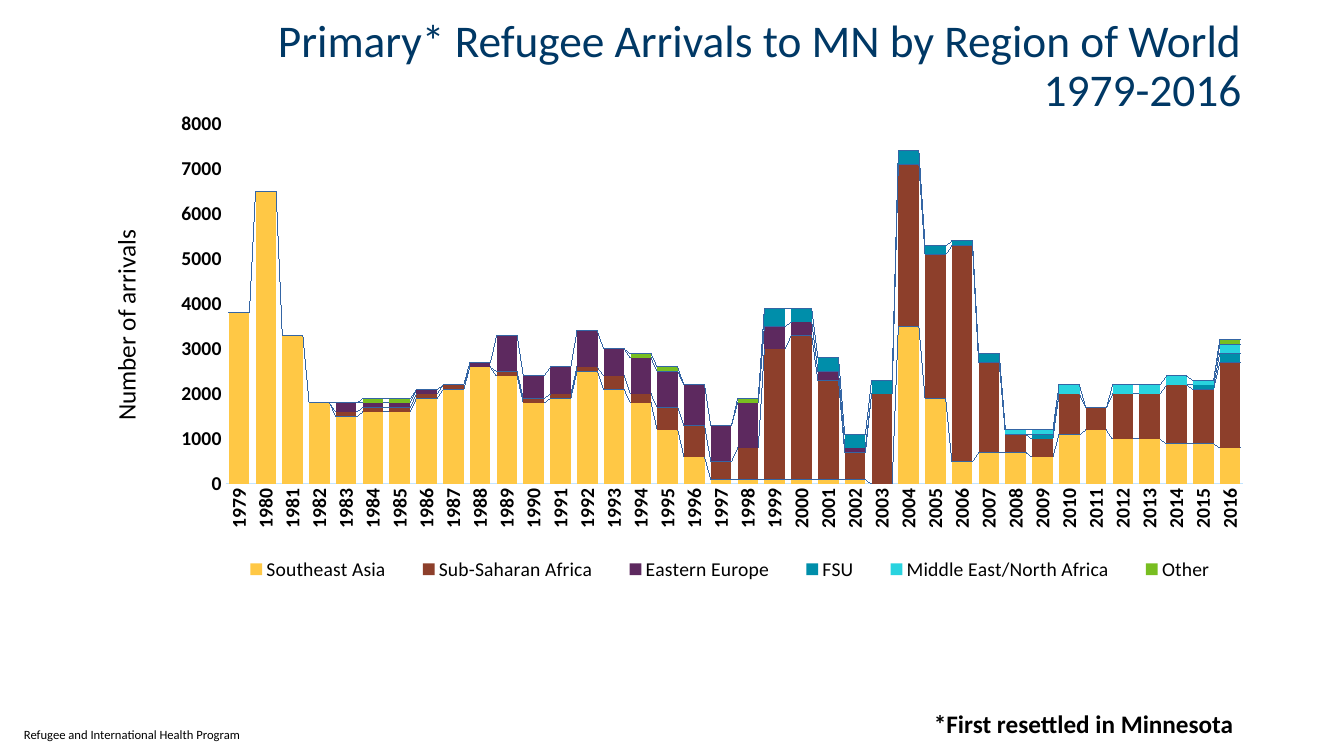
from dataclasses import dataclass

from lxml.etree import SubElement
from pptx import Presentation
from pptx.chart.data import CategoryChartData
from pptx.dml.color import RGBColor
from pptx.enum.chart import XL_CHART_TYPE, XL_LEGEND_POSITION, XL_TICK_MARK
from pptx.enum.text import MSO_ANCHOR, MSO_AUTO_SIZE, PP_ALIGN
from pptx.oxml import parse_xml
from pptx.oxml.ns import nsdecls, qn
from pptx.util import Pt


@dataclass(frozen=True)
class Theme:
    font: str = "Calibri"
    navy: str = "003865"
    black: str = "000000"
    axis: str = "C2E4FF"
    series_line: str = "1F5FA8"
    title: float = 32.4
    large: float = 18
    label: float = 14
    base: float = 10
    small: float = 9


THEME = Theme()
YEARS = [str(year) for year in range(1979, 2017)]
ARRIVALS_IN_HUNDREDS = {
    "Southeast Asia": ("FFC845", [
        38, 65, 33, 18, 15, 16, 16, 19, 21, 26, 24, 18, 19, 25, 21, 18, 12, 6, 1,
        1, 1, 1, 1, 1, 0, 35, 19, 5, 7, 7, 6, 11, 12, 10, 10, 9, 9, 8]),
    "Sub-Saharan Africa": ("8D3F2B", [
        0, 0, 0, 0, 1, 1, 1, 1, 1, 0, 1, 1, 1, 1, 3, 2, 5, 7, 4,
        7, 29, 32, 22, 6, 20, 36, 32, 48, 20, 4, 4, 9, 5, 10, 10, 13, 12, 19]),
    "Eastern Europe": ("5D295F", [
        0, 0, 0, 0, 2, 1, 1, 1, 0, 1, 8, 5, 6, 8, 6, 8, 8, 9, 8,
        10, 5, 3, 2, 1, 0] + [None] * 13),
    "FSU": ("008EAA", [0] * 20 + [
        4, 3, 3, 3, 3, 3, 2, 1, 2, 0, 1, 0, 0, 0, 0, 0, 1, 2]),
    "Middle East/North Africa": ("29D3DF", [None] * 29 + [
        1, 1, 2, 0, 2, 2, 2, 1, 2]),
    "Other": ("78BE21", [0] * 5 + [1, 1] + [0] * 8 + [1, 1, 0, 0, 1] + [0] * 17 + [1]),
}


def style_font(font, size, color, bold=False):
    font.name = THEME.font
    font.size = Pt(size)
    font.bold = bold
    font.color.rgb = RGBColor.from_string(color)


def place(shape, box):
    shape.left, shape.top, shape.width, shape.height = (Pt(v) for v in box)


def add_title(slide, box):
    title = slide.shapes.title
    place(title, box)
    tf = title.text_frame
    tf.text = "Primary* Refugee Arrivals to MN by Region of World\v1979-2016"
    tf.auto_size = MSO_AUTO_SIZE.NONE
    tf.vertical_anchor = MSO_ANCHOR.MIDDLE
    p = tf.paragraphs[0]
    p.alignment = PP_ALIGN.RIGHT
    p.line_spacing = 0.9
    for r in p.runs:
        style_font(r.font, THEME.title, THEME.navy)


def add_note(slide, box, text, size, bold=False):
    tf = slide.shapes.add_textbox(*(Pt(v) for v in box)).text_frame
    tf.word_wrap = True
    tf.text = text
    style_font(tf.paragraphs[0].runs[0].font, size, THEME.black, bold)


def set_layout(parent, after, x, y, w=None, h=None, inner=False):
    for old in parent.findall(qn("c:layout")):
        parent.remove(old)
    layout = parse_xml(f"<c:layout {nsdecls('c')}/>")
    manual = SubElement(layout, qn("c:manualLayout"))
    settings = [("layoutTarget", "inner" if inner else None),
                ("xMode", "edge"), ("yMode", "edge"),
                ("x", x), ("y", y), ("w", w), ("h", h)]
    for tag, value in settings:
        if value is not None:
            SubElement(manual, qn(f"c:{tag}")).set("val", str(value))
    if after is None:
        parent.insert(0, layout)
    else:
        parent.find(qn(after)).addnext(layout)


def style_axes(chart):
    years, counts = chart.category_axis, chart.value_axis
    for axis in (years, counts):
        axis.major_tick_mark = axis.minor_tick_mark = XL_TICK_MARK.NONE
        axis.has_major_gridlines = False
        style_font(axis.tick_labels.font, THEME.label, THEME.black, True)
    years.format.line.color.rgb = RGBColor.from_string(THEME.axis)
    years.format.line.width = Pt(0.75)
    years_text = years._element.find(qn("c:txPr")).find(qn("a:bodyPr"))
    years_text.set("rot", "-5400000")
    years_text.set("vert", "horz")
    counts.format.line.fill.background()
    counts.minimum_scale, counts.maximum_scale, counts.major_unit = 0, 8000, 1000
    tf = counts.axis_title.text_frame
    tf.text = "Number of arrivals"
    style_font(tf.paragraphs[0].runs[0].font, THEME.large, THEME.black)
    body = tf._txBody.find(qn("a:bodyPr"))
    body.set("rot", "-5400000")
    body.set("vert", "horz")
    set_layout(counts.axis_title._element, "c:tx", 0.01, 0.23)


def add_series_lines(plot):
    lines = parse_xml(
        f'<c:serLines {nsdecls("c", "a")}><c:spPr><a:ln w="9525"><a:solidFill>'
        f'<a:srgbClr val="{THEME.series_line}"/></a:solidFill></a:ln></c:spPr></c:serLines>')
    plot._element.find(qn("c:overlap")).addnext(lines)


def add_arrivals_chart(slide, box):
    data = CategoryChartData(number_format="General")
    data.categories = YEARS
    for name, (_, hundreds) in ARRIVALS_IN_HUNDREDS.items():
        data.add_series(name, [None if v is None else v * 100 for v in hundreds])
    chart = slide.shapes.add_chart(
        XL_CHART_TYPE.COLUMN_STACKED, *(Pt(v) for v in box), data).chart
    style_font(chart.font, THEME.base, THEME.navy)
    chart.has_title = False
    plot = chart.plots[0]
    plot.gap_width, plot.overlap = 30, 100
    plot.vary_by_categories = False
    for series, (color, _) in zip(plot.series, ARRIVALS_IN_HUNDREDS.values()):
        series.format.fill.solid()
        series.format.fill.fore_color.rgb = RGBColor.from_string(color)
    add_series_lines(plot)
    style_axes(chart)
    chart.has_legend = True
    legend = chart.legend
    legend.position = XL_LEGEND_POSITION.BOTTOM
    legend.include_in_layout = False
    style_font(legend.font, THEME.label, THEME.black)
    set_layout(legend._element, "c:legendPos", 0.11, 0.86, 0.88, 0.07)
    plot_area = plot._element.getparent()
    set_layout(plot_area, None, 0.115, 0.034, 0.878, 0.696, inner=True)


def main():
    prs = Presentation()
    prs.slide_width, prs.slide_height = Pt(960), Pt(540)
    slide = prs.slides.add_slide(prs.slide_layouts[5])
    left, width = 66, 828
    add_title(slide, (left, 12, width, 72))
    add_arrivals_chart(slide, (left, 76, width, 369.5))
    add_note(slide, (660, 502.5, 234, 29), "*First resettled in Minnesota", THEME.large, True)
    add_note(slide, (10, 516, 170, 18), "Refugee and International Health Program", THEME.small)
    prs.save("out.pptx")


if __name__ == "__main__":
    main()
